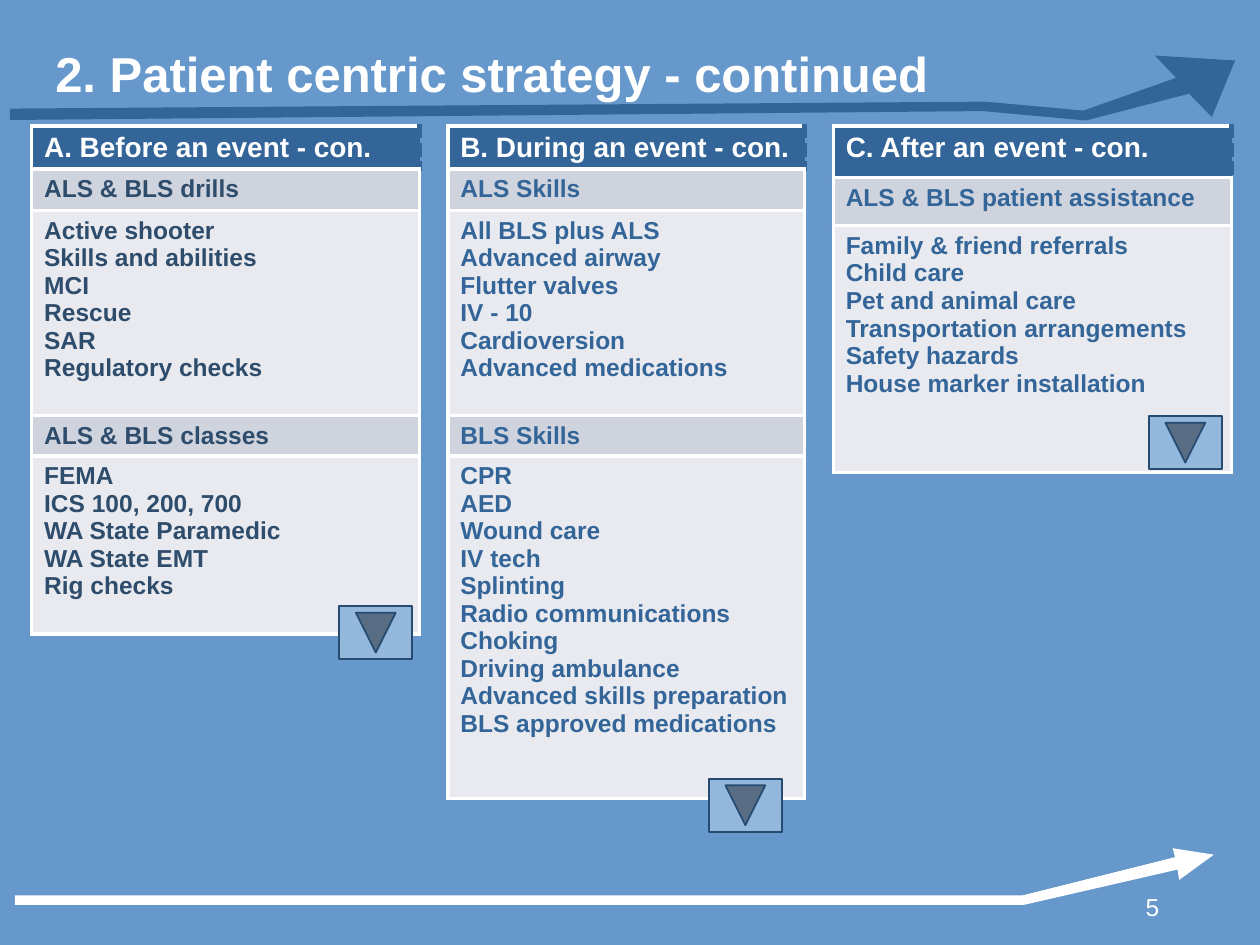
from lxml import etree
from pptx import Presentation, util as u
from pptx.dml.color import RGBColor
from pptx.enum import shapes, text
from pptx.oxml import ns

WHITE, NAVY, SLATE = "FFFFFF", "336599", "2E4C6B"
BAND, BODY = "CED3DE", "E8EAEF"
TOP = 2.54

PLANS = [
    dict(left=0.64, width=7.82, color=SLATE, button=(6.4, 9.48),
         rows=[0.87, 0.83, 4.14, 0.81, 3.59],
         cells=["A. Before an event - con.", "ALS & BLS drills",
                "Active shooter\nSkills and abilities\nMCI\nRescue\nSAR\nRegulatory checks",
                "ALS & BLS classes",
                "FEMA\nICS 100, 200, 700\nWA State Paramedic\nWA State EMT\nRig checks"]),
    dict(left=9.03, width=7.19, color=NAVY, button=(5.46, 12.96),
         rows=[0.87, 0.83, 4.14, 0.81, 6.91],
         cells=["B. During an event - con.", "ALS Skills",
                "All BLS plus ALS\nAdvanced airway\nFlutter valves\nIV - 10\n"
                "Cardioversion\nAdvanced medications",
                "BLS Skills",
                "CPR\nAED\nWound care\nIV tech\nSplinting\nRadio communications\nChoking\n"
                "Driving ambulance\nAdvanced skills preparation\nBLS approved medications"]),
    dict(left=16.8, width=8.03, color=NAVY, button=(6.56, 5.65),
         rows=[1.04, 0.97, 4.98],
         cells=["C. After an event - con.", "ALS & BLS patient assistance",
                "Family & friend referrals\nChild care\nPet and animal care\n"
                "Transportation arrangements\nSafety hazards\nHouse marker installation"]),
]

RISE = [(0, 1.3), (19.61, 1.12), (21.69, 1.31), (23.77, 0.77), (24.23, 1.24),
        (24.7, 0.1), (23.08, 0), (23.51, 0.45), (21.64, 1.11), (19.66, 0.93), (0, 1.07)]
SWEEP = [(0, 0.95), (20.32, 0.95), (23.39, 0.18), (23.34, 0), (24.17, 0.13),
         (23.47, 0.64), (23.44, 0.43), (20.35, 1.14), (0, 1.14)]


def paint(fill, color):
    fill.solid()
    fill.fore_color.rgb = RGBColor.from_string(color)


def write(frame, words, size=14, color=WHITE, bold=True, align=text.PP_ALIGN.LEFT):
    frame.word_wrap = True
    frame.text = words
    for para in frame.paragraphs:
        para.alignment = align
        for run in para.runs:
            run.font.name = "Arial"
            run.font.size = u.Pt(size)
            run.font.bold = bold
            run.font.color.rgb = RGBColor.from_string(color)


def edge(cell, sides):
    props = cell._tc.get_or_add_tcPr()
    for spot, (side, color, width, dash) in enumerate(sides):
        line = etree.Element(ns.qn(f"a:ln{side}"), w=str(u.Pt(width)))
        fill = etree.SubElement(line, ns.qn("a:solidFill"))
        etree.SubElement(fill, ns.qn("a:srgbClr"), val=color)
        etree.SubElement(line, ns.qn("a:prstDash"), val=dash)
        props.insert(spot, line)


def arrow(slide, left, top, points, color):
    spots = [(u.Cm(left + x), u.Cm(top + y)) for x, y in points]
    pen = slide.shapes.build_freeform(*spots[0], scale=1.0)
    pen.add_line_segments(spots[1:], close=True)
    shape = pen.convert_to_shape()
    shape.shadow.inherit = False
    paint(shape.fill, color)
    shape.line.fill.background()


def title(slide, left, top, width, height):
    box = slide.shapes.title
    box.left, box.top, box.width, box.height = map(u.Cm, (left, top, width, height))
    write(box.text_frame, "2. Patient centric strategy - continued", size=28)
    box.text_frame.vertical_anchor = text.MSO_ANCHOR.MIDDLE


def number(slide, left, top, width, height):
    box = slide.shapes.add_textbox(*map(u.Cm, (left, top, width, height)))
    write(box.text_frame, "5", bold=False, align=text.PP_ALIGN.RIGHT)


def button(slide, left, top):
    shape = slide.shapes.add_shape(
        shapes.MSO_SHAPE.ACTION_BUTTON_FORWARD_OR_NEXT,
        *map(u.Cm, (left, top, 1.07, 1.47)))
    shape.rotation = 90
    shape.shadow.inherit = False
    paint(shape.fill, "94B7DC")
    paint(shape.line.fill, "264B71")
    shape.line.width = u.Pt(1)


def column(slide, left, top, width, rows, cells, color):
    table = slide.shapes.add_table(
        len(rows), 1, *map(u.Cm, (left, top, width, sum(rows)))).table
    table.first_row = table.horz_banding = False
    table.columns[0].width = u.Cm(width)
    for i, (tall, words) in enumerate(zip(rows, cells)):
        table.rows[i].height = u.Cm(tall)
        cell = table.cell(i, 0)
        cell.margin_left = cell.margin_right = u.Cm(0.25)
        cell.margin_top, cell.margin_bottom = u.Cm(0.13), u.Cm(0.05)
        paint(cell.fill, NAVY if i == 0 else BAND if i % 2 else BODY)
        write(cell.text_frame, words, size=14 if i else 16, color=color if i else WHITE)
        plain = (WHITE, 2.25, "solid")
        right = plain if i else (NAVY, 3, "sysDash")
        edge(cell, [("L", *plain), ("R", *right), ("T", *plain), ("B", *plain)])


def main():
    deck = Presentation()
    deck.slide_width, deck.slide_height = u.Cm(25.4), u.Cm(19.05)
    slide = deck.slides.add_slide(deck.slide_layouts[5])
    paint(slide.background.fill, "6698CC")
    arrow(slide, 0.3, 17.1, SWEEP, WHITE)
    arrow(slide, 0.2, 1.12, RISE, NAVY)
    title(slide, 0.86, 0.66, 23.04, 1.6)
    number(slide, 21.79, 17.86, 1.83, 0.79)
    for plan in PLANS:
        column(slide, plan["left"], TOP, plan["width"],
               plan["rows"], plan["cells"], plan["color"])
    for plan in PLANS:
        x, y = plan["button"]
        button(slide, plan["left"] + x, TOP + y)
    deck.save("out.pptx")


if __name__ == "__main__":
    main()
